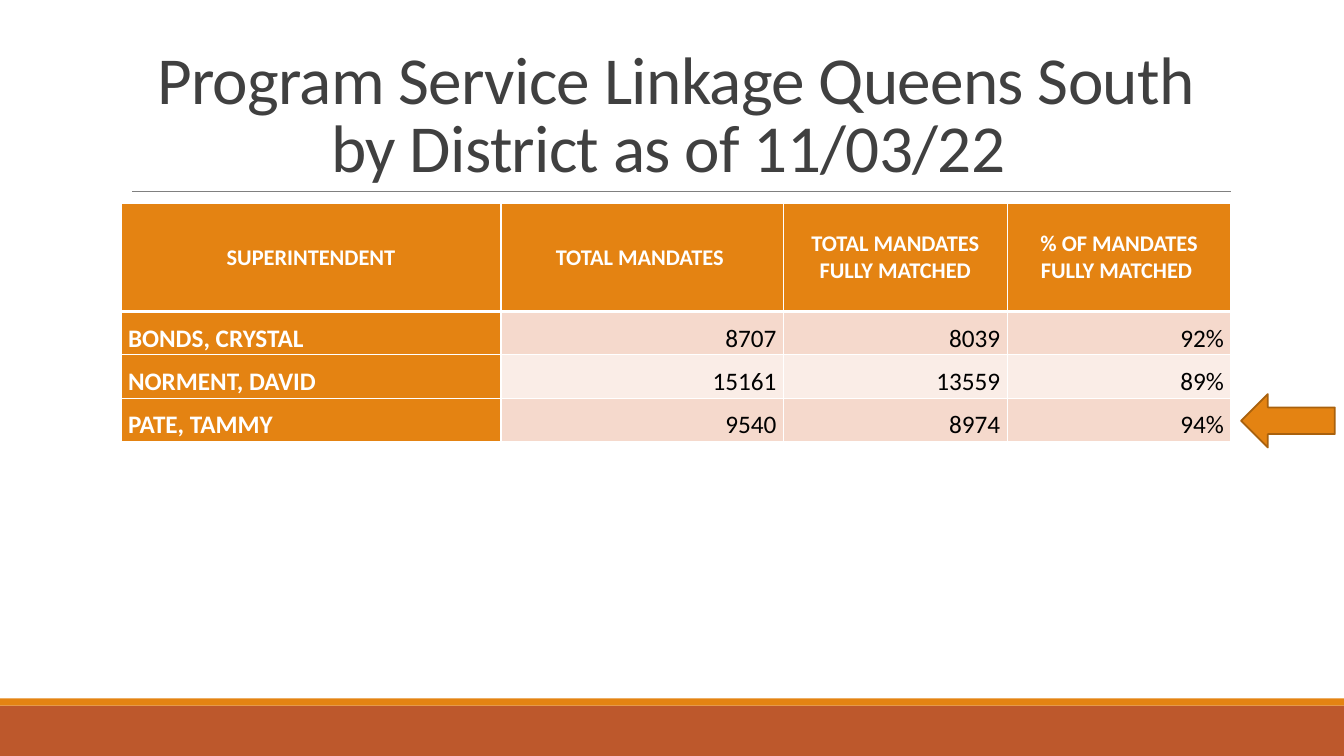
import pptx
import pptx.util
import pptx.dml.color
import pptx.enum.shapes
import pptx.enum.text
import pptx.oxml
import pptx.oxml.ns

RGB = pptx.dml.color.RGBColor
SHAPE = pptx.enum.shapes.MSO_SHAPE
ALIGN = pptx.enum.text.PP_ALIGN
ANCHOR = pptx.enum.text.MSO_ANCHOR

ORANGE = RGB(0xE4, 0x83, 0x12)
RUST = RGB(0xBD, 0x58, 0x2C)
BROWN = RGB(0xA9, 0x61, 0x0D)
PINK = RGB(0xF5, 0xD9, 0xCC)
PALE = RGB(0xFA, 0xED, 0xE7)
GRAY = RGB(0x80, 0x80, 0x80)
DARK = RGB(0x40, 0x40, 0x40)
WHITE = RGB(0xFF, 0xFF, 0xFF)
BLACK = RGB(0, 0, 0)

FONT = "Calibri"
WIDE, HIGH = 1333, 750
COLS = (377, 280, 222, 222)
HEAD_H, ROW_H = 107, 43

TITLE = "Program Service Linkage Queens South by District as of 11/03/22 "
ROWS = (
    ("SUPERINTENDENT", "TOTAL MANDATES ", "TOTAL MANDATES FULLY MATCHED",
     "% OF MANDATES FULLY MATCHED "),
    ("BONDS, CRYSTAL", "8707", "8039", "92%"),
    ("NORMENT, DAVID", "15161", "13559", "89%"),
    ("PATE, TAMMY", "9540", "8974", "94%"),
)


def px(n):
    """Turn px, 100 to the inch, into EMU."""
    return pptx.util.Emu(n * 9144)


def style(para, size, color, bold, align):
    para.alignment = align
    for run in para.runs:
        font = run.font
        font.name, font.size, font.bold = FONT, pptx.util.Pt(size), bold
        font.color.rgb = color


def add_block(slide, kind, box, fill, edge=None):
    shape = slide.shapes.add_shape(kind, *map(px, box))
    shape.shadow.inherit = False
    shape.fill.solid()
    shape.fill.fore_color.rgb = fill
    if edge:
        shape.line.color.rgb = edge
        shape.line.width = pptx.util.Pt(1.25)
    else:
        shape.line.fill.background()


def add_footer(slide, left, top, width, height):
    strip = 7
    add_block(slide, SHAPE.RECTANGLE,
              (left, top + strip, width, height - strip), RUST)
    add_block(slide, SHAPE.RECTANGLE, (left, top, width, strip), ORANGE)


def add_rule(slide, left, top, width):
    line = slide.shapes.add_connector(
        pptx.enum.shapes.MSO_CONNECTOR.STRAIGHT,
        px(left), px(top), px(left + width), px(top))
    line.line.color.rgb = GRAY
    line.line.width = pptx.util.Pt(0.5)
    pptx.oxml.ns.qn("a:effectLst")
    line._element.spPr.append(pptx.oxml.parse_xml(
        f'<a:effectLst {pptx.oxml.ns.nsdecls("a")}/>'))


def set_title(slide, left, top, width, height):
    title = slide.shapes.title
    title.left, title.top = px(left), px(top)
    title.width, title.height = px(width), px(height)
    frame = title.text_frame
    frame.text = TITLE
    frame.word_wrap = True
    frame.auto_size = pptx.enum.text.MSO_AUTO_SIZE.NONE
    frame.vertical_anchor = ANCHOR.BOTTOM
    para = frame.paragraphs[0]
    para.line_spacing = 0.85
    style(para, 48, DARK, False, ALIGN.CENTER)
    para.runs[0].font._element.set("spc", "-50")


def set_edges(cell, row):
    """Draw white borders, thick between the head and the first row."""
    props = cell._tc.get_or_add_tcPr()
    thick = {"T": row == 1, "B": row == 0}
    for side in "LRTB":
        width = pptx.util.Pt(3 if thick.get(side) else 1)
        props.append(pptx.oxml.parse_xml(
            f'<a:ln{side} {pptx.oxml.ns.nsdecls("a")} w="{width}">'
            f'<a:solidFill><a:srgbClr val="{WHITE}"/></a:solidFill>'
            f'</a:ln{side}>'))


def fill_cell(cell, text, row, col):
    head, name = row == 0, col == 0
    set_edges(cell, row)
    cell.fill.solid()
    band = PINK if row % 2 else PALE
    cell.fill.fore_color.rgb = ORANGE if head or name else band
    cell.margin_left = cell.margin_right = px(7)
    cell.margin_top = cell.margin_bottom = px(1)
    cell.vertical_anchor = ANCHOR.MIDDLE if head else ANCHOR.BOTTOM
    cell.text_frame.text = text
    para = cell.text_frame.paragraphs[0]
    if head:
        style(para, 16, WHITE, True, ALIGN.CENTER)
    elif name:
        style(para, 18, WHITE, True, ALIGN.LEFT)
    else:
        style(para, 18, BLACK, False, ALIGN.RIGHT)


def add_grid(slide, left, top):
    high = HEAD_H + ROW_H * (len(ROWS) - 1)
    table = slide.shapes.add_table(
        len(ROWS), len(COLS), px(left), px(top),
        px(sum(COLS)), px(high)).table
    for col, width in enumerate(COLS):
        table.columns[col].width = px(width)
    for row, texts in enumerate(ROWS):
        table.rows[row].height = px(ROW_H if row else HEAD_H)
        for col, text in enumerate(texts):
            fill_cell(table.cell(row, col), text, row, col)


def main():
    deck = pptx.Presentation()
    deck.slide_width, deck.slide_height = px(WIDE), px(HIGH)
    slide = deck.slides.add_slide(deck.slide_layouts[5])
    add_footer(slide, 0, 693, WIDE, HIGH - 693)
    add_rule(slide, 131, 190, 1090)
    set_title(slide, 120, 31, 1100, 159)
    add_grid(slide, 120, 202)
    add_block(slide, SHAPE.LEFT_ARROW, (1231, 391, 93, 53), ORANGE, BROWN)
    deck.save("out.pptx")


if __name__ == "__main__":
    main()
